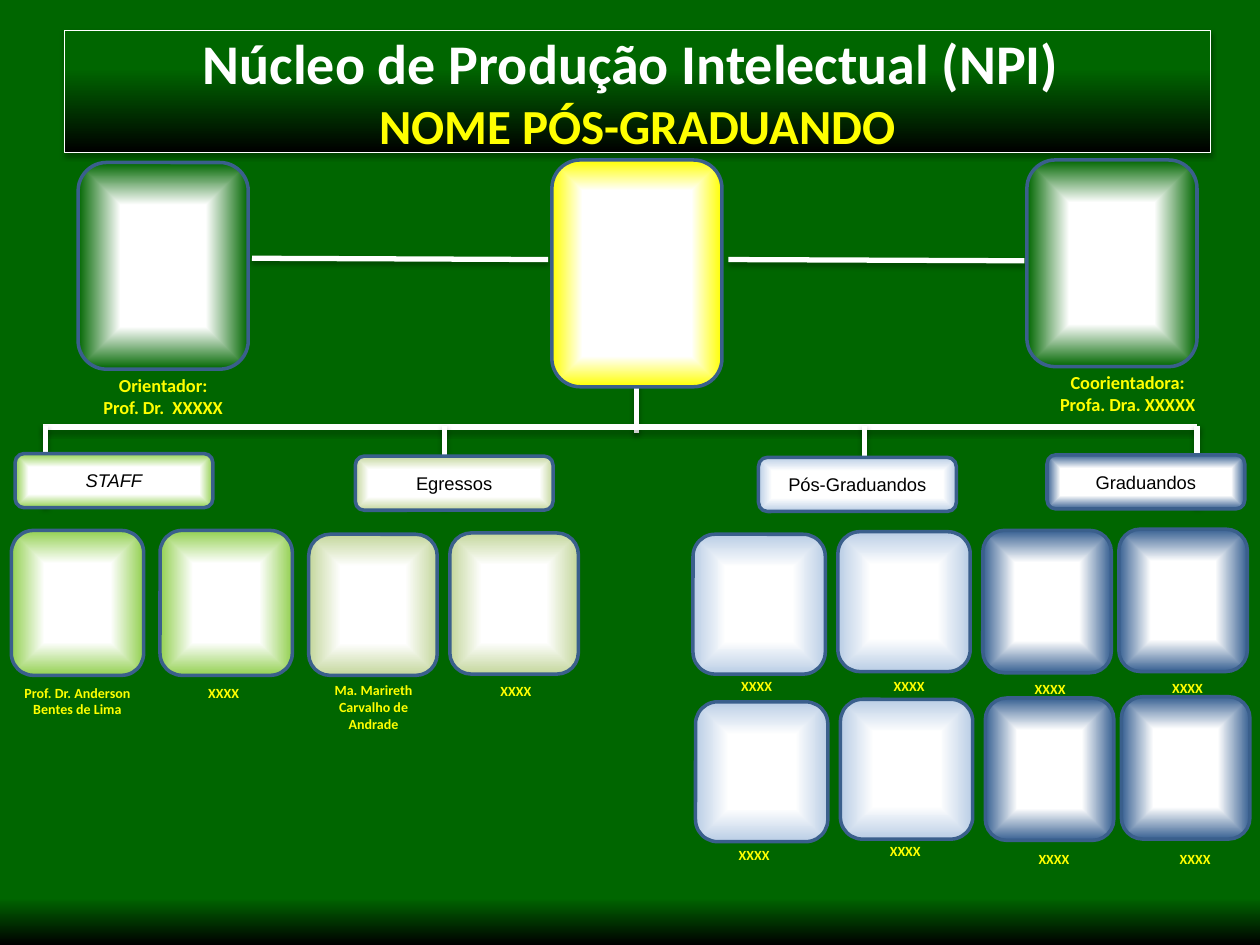
from lxml import etree
from pptx import Presentation
from pptx.dml.color import RGBColor
from pptx.enum.shapes import MSO_CONNECTOR, MSO_SHAPE
from pptx.enum.text import MSO_ANCHOR, MSO_AUTO_SIZE, PP_ALIGN
from pptx.oxml import parse_xml
from pptx.oxml.ns import nsdecls, qn
from pptx.util import Inches, Pt

ROUND = MSO_SHAPE.ROUNDED_RECTANGLE
STRAIGHT = MSO_CONNECTOR.STRAIGHT
CENTER = PP_ALIGN.CENTER
MIDDLE = MSO_ANCHOR.MIDDLE
NO_FIT = MSO_AUTO_SIZE.NONE

HUES = {
    "green": "006600", "black": "000000", "white": "FFFFFF",
    "yellow": "FFFF00", "edge": "3A5F8C", "lime": "92D050",
    "olive": "C3D69B", "sky": "B9CDE5", "navy": "376092",
}

LINES = [  # x1, y1, x2, y2
    (5.05, 2.63, 5.05, 3.44),
    (2, 2.05, 4.35, 2.06),
    (5.78, 2.06, 8.13, 2.07),
    (0.34, 3.39, 9.5, 3.39),
] + [(x, 3.38, x, 4.02) for x in (0.36, 3.53, 6.86, 9.5)]

# Label text and place, hue, first tile box, column step (x, y),
# then rows of captions: left, top, text
TEAMS = [
    ("STAFF", (0.12, 3.6), "lime", (0.09, 4.21, 1.05, 1.15), (1.18, 0),
     [[(0.09, 5.38, "Prof. Dr. Anderson Bentes de Lima"), (1.25, 5.38, "XXXX")]]),
    ("Egressos", (2.82, 3.62), "olive", (2.45, 4.24, 1.02, 1.12), (1.12, -0.01),
     [[(2.44, 5.36, "Ma. Marireth Carvalho de Andrade"), (3.57, 5.37, "XXXX")]]),
    ("Pós-Graduandos", (6.02, 3.63), "sky", (5.5, 4.24, 1.05, 1.11), (1.15, -0.02),
     [[(5.48, 5.33, "XXXX"), (6.69, 5.33, "XXXX")],
      [(5.46, 6.67, "XXXX"), (6.66, 6.64, "XXXX")]]),
    ("Graduandos", (8.31, 3.61), "navy", (7.8, 4.21, 1.02, 1.13), (1.08, -0.01),
     [[(7.81, 5.35, "XXXX"), (8.9, 5.34, "XXXX")],
      [(7.84, 6.7, "XXXX"), (8.96, 6.7, "XXXX")]]),
]
ROW_STEP = (0.02, 1.33)


def color(name):
    return RGBColor.from_string(HUES[name])


def blend(owner, stops, boxed=False):
    """Fill a shape or background with colour stops, downward or from the centre."""
    owner.fill.gradient()
    grad = next(owner._element.iter(qn("a:gradFill")))
    for child in list(grad):
        grad.remove(child)
    parts = etree.SubElement(grad, qn("a:gsLst"))
    for pos, name in stops:
        stop = etree.SubElement(parts, qn("a:gs"), pos=str(pos * 1000))
        etree.SubElement(stop, qn("a:srgbClr"), val=HUES[name])
    if boxed:
        way = etree.SubElement(grad, qn("a:path"))
        way.set("path", "rect")
        etree.SubElement(way, qn("a:fillToRect"), dict.fromkeys("ltrb", "50000"))
    else:
        etree.SubElement(grad, qn("a:lin"), ang="5400000", scaled="0")


def shade(shape):
    """Add the soft shadow that falls below lines and the heading."""
    shape._element.spPr.append(parse_xml(
        f'<a:effectLst {nsdecls("a")}><a:outerShdw blurRad="40000" dist="23000" '
        'dir="5400000" rotWithShape="0"><a:srgbClr val="000000">'
        '<a:alpha val="35000"/></a:srgbClr></a:outerShdw></a:effectLst>'))


def write(frame, rows):
    """Write centred paragraphs of (text, size, font, hue, bold, italic)."""
    frame.word_wrap = True
    for num, (text, size, face, hue, bold, slant) in enumerate(rows):
        para = frame.add_paragraph() if num else frame.paragraphs[0]
        para.alignment = CENTER
        run = para.add_run()
        run.text = text
        font = run.font
        font.size, font.name = Pt(size), face
        font.bold, font.italic = bold, slant
        font.color.rgb = color(hue)


def heading(slide, box):
    title = slide.shapes.title
    title.left, title.top, title.width, title.height = map(Inches, box)
    blend(title, [(0, "green"), (31, "green"), (100, "black")])
    title.line.color.rgb = color("white")
    title.line.width = Pt(0.75)
    shade(title)
    frame = title.text_frame
    frame.auto_size = NO_FIT
    frame.vertical_anchor = MIDDLE
    write(frame, [
        ("Núcleo de Produção Intelectual (NPI) ", 32, "Calibri", "white", True, False),
        ("NOME PÓS-GRADUANDO", 28, "Calibri", "yellow", True, False),
    ])


def link(slide, ends):
    line = slide.shapes.add_connector(STRAIGHT, *map(Inches, ends))
    line.line.color.rgb = color("white")
    line.line.width = Pt(3)
    shade(line)


def card(slide, box, hue, core=50):
    """Draw a rounded frame that fades from a white core to its hue."""
    shape = slide.shapes.add_shape(ROUND, *map(Inches, box))
    shape.shadow.inherit = False
    blend(shape, [(core, "white"), (100, hue)], boxed=True)
    shape.line.color.rgb = color("edge")
    shape.line.width = Pt(2)
    return shape


def note(slide, box, size, *texts):
    text = slide.shapes.add_textbox(*map(Inches, box))
    write(text.text_frame,
          [(words, size, "Calibri", "yellow", True, False) for words in texts])


def heads(slide, left, top):
    """Place the student between the two advisers."""
    card(slide, (left, top + 0.02, 1.35, 1.64), "green")
    card(slide, (left + 3.76, top, 1.35, 1.8), "yellow", core=64)
    card(slide, (left + 7.53, top, 1.35, 1.64), "green")
    note(slide, (left - 0.67, top + 1.65, 2.69, 0.45), 10.5,
         "Orientador:", "Prof. Dr.  XXXXX")
    note(slide, (left + 7.1, top + 1.63, 2.46, 0.45), 10.5,
         "Coorientadora:", "Profa. Dra. XXXXX")


def team(slide, label, spot, hue, tile, step, rows):
    tag = card(slide, (*spot, 1.57, 0.43), hue)
    tag.text_frame.vertical_anchor = MIDDLE
    write(tag.text_frame, [(label, 10.5, "Arial", "black", False, label == "STAFF")])
    left, top, wide, high = tile
    for row, people in enumerate(rows):
        for col, (x, y, name) in enumerate(people):
            card(slide, (left + col * step[0] + row * ROW_STEP[0],
                         top + col * step[1] + row * ROW_STEP[1], wide, high), hue)
            note(slide, (x, y, 1.05, 0.24), 8, name)


def main():
    deck = Presentation()
    deck.slide_width, deck.slide_height = Inches(10), Inches(7.5)
    slide = deck.slides.add_slide(deck.slide_layouts[5])
    slide.background.fill.gradient()
    blend_page(slide)
    heading(slide, (0.51, 0.24, 9.1, 0.97))
    for ends in LINES:
        link(slide, ends)
    heads(slide, 0.62, 1.27)
    for parts in TEAMS:
        team(slide, *parts)
    deck.save("out.pptx")


def blend_page(slide):
    page = slide.background
    blend(page, [(95, "green"), (100, "black")])


if __name__ == "__main__":
    main()
